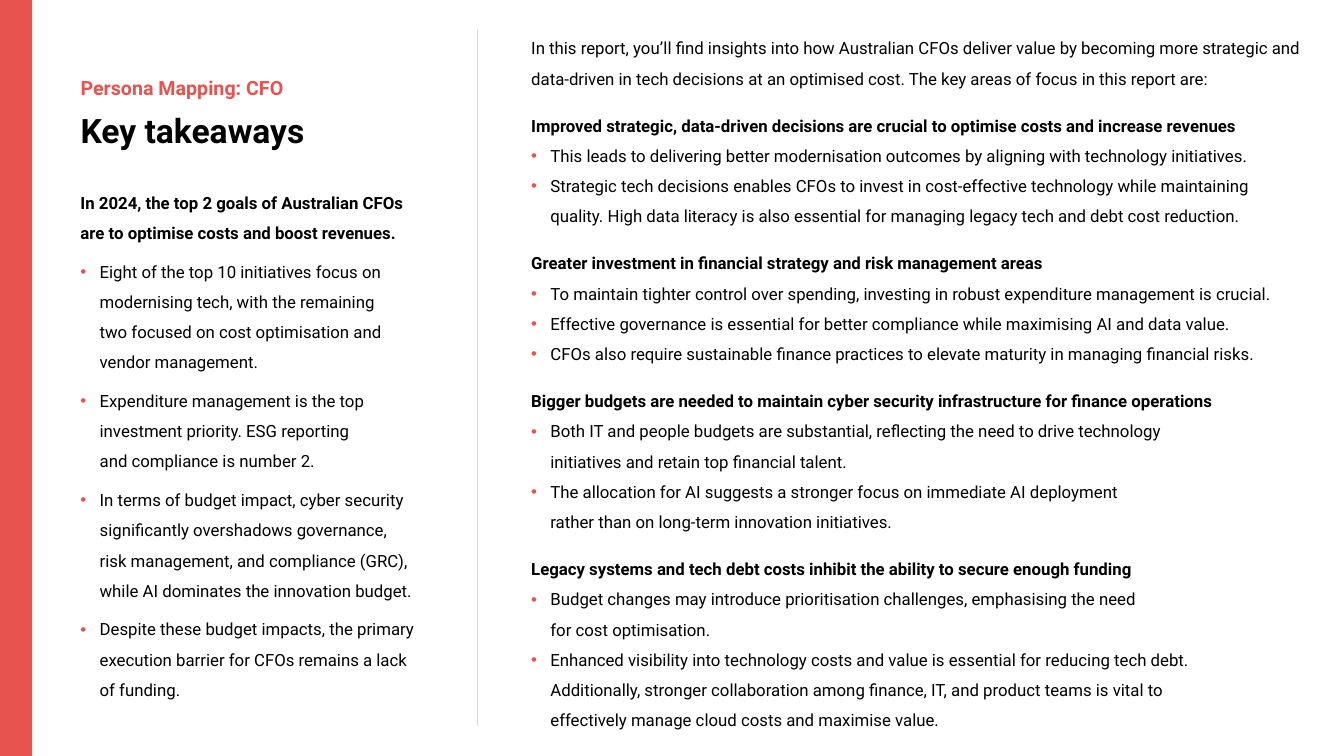
import pptx
import pptx.dml.color
import pptx.enum.shapes
import pptx.enum.text
import pptx.oxml.ns
import pptx.util
from lxml import etree
from pptx.util import Inches

FONT = "Roboto"
CORAL = "E7534F"
BLACK = "000000"
RULE_GREY = "D9D9D9"

GOALS = (
    "In 2024, the top 2 goals of Australian CFOs \nare to optimise costs and boost revenues.",
    [
        "Eight of the top 10 initiatives focus on modernising tech, with the remaining \n"
        "two focused on cost optimisation and \nvendor management.",
        "Expenditure management is the top \ninvestment priority. ESG reporting \n"
        "and compliance is number 2.",
        "In terms of budget impact, cyber security significantly overshadows governance, \n"
        "risk management, and compliance (GRC), \nwhile AI dominates the innovation budget.",
        "Despite these budget impacts, the primary execution barrier for CFOs remains a lack \n"
        "of funding.",
    ],
)

INTRO = (
    "In this report, you’ll find insights into how Australian CFOs deliver value by becoming "
    "more strategic and data-driven in tech decisions at an optimised cost. "
    "The key areas of focus in this report are:"
)

FOCUS_AREAS = [
    (
        "Improved strategic, data-driven decisions are crucial to optimise costs and increase revenues",
        [
            "This leads to delivering better modernisation outcomes by aligning with "
            "technology initiatives.",
            "Strategic tech decisions enables CFOs to invest in cost-effective technology while "
            "maintaining quality. High data literacy is also essential for managing legacy tech "
            "and debt cost reduction.",
        ],
    ),
    (
        "Greater investment in financial strategy and risk management areas",
        [
            "To maintain tighter control over spending, investing in robust expenditure "
            "management is crucial.",
            "Effective governance is essential for better compliance while maximising AI and "
            "data value.",
            "CFOs also require sustainable finance practices to elevate maturity in managing "
            "financial risks.",
        ],
    ),
    (
        "Bigger budgets are needed to maintain cyber security infrastructure for finance operations",
        [
            "Both IT and people budgets are substantial, reflecting the need to drive technology \n"
            "initiatives and retain top financial talent.",
            "The allocation for AI suggests a stronger focus on immediate AI deployment \n"
            "rather than on long-term innovation initiatives.",
        ],
    ),
    (
        "Legacy systems and tech debt costs inhibit the ability to secure enough funding",
        [
            "Budget changes may introduce prioritisation challenges, emphasising the need \n"
            "for cost optimisation.",
            "Enhanced visibility into technology costs and value is essential for reducing tech debt. \n"
            "Additionally, stronger collaboration among finance, IT, and product teams is vital to \n"
            "effectively manage cloud costs and maximise value.",
        ],
    ),
]


def colour(value):
    return pptx.dml.color.RGBColor.from_string(value)


def add_element(parent, tag, **attributes):
    return etree.SubElement(parent, pptx.oxml.ns.qn(tag), **attributes)


def add_bullet(para):
    """Give the paragraph a coral bullet with a hanging indent."""
    properties = para._p.get_or_add_pPr()
    indent = Inches(0.19)
    properties.set("marL", str(indent))
    properties.set("indent", str(-indent))
    add_element(add_element(properties, "a:buClr"), "a:srgbClr", val=CORAL)
    add_element(properties, "a:buFont", typeface="Arial")
    add_element(properties, "a:buChar", char="•")


def add_text(frame, text, size=12, color=BLACK, bold=False, bullet=False, spacing=1.5, after=0):
    """Append one formatted paragraph; newlines become line breaks."""
    first = frame.paragraphs[0]
    para = frame.add_paragraph() if first.runs else first
    para.text = text.replace("\n", "\v")
    para.line_spacing = spacing
    para.space_after = pptx.util.Pt(after)
    if bullet:
        add_bullet(para)
    for span in para.runs:
        span.font.name = FONT
        span.font.size = pptx.util.Pt(size)
        span.font.bold = bold
        span.font.color.rgb = colour(color)
    # Line breaks take the text size so that line heights stay even
    for line_break in para._p.findall(pptx.oxml.ns.qn("a:br")):
        add_element(line_break, "a:rPr", sz=str(size * 100))


def add_text_box(page, left, top, width, height):
    box = page.shapes.add_textbox(Inches(left), Inches(top), Inches(width), Inches(height))
    frame = box.text_frame
    frame.word_wrap = True
    frame.auto_size = pptx.enum.text.MSO_AUTO_SIZE.SHAPE_TO_FIT_TEXT
    return frame


def add_side_band(page):
    band = page.shapes.add_shape(
        pptx.enum.shapes.MSO_SHAPE.RECTANGLE, 0, 0, Inches(0.32), Inches(7.5)
    )
    band.shadow.inherit = False
    band.fill.solid()
    band.fill.fore_color.rgb = colour(CORAL)
    band.line.fill.background()


def add_divider(page, left, top, bottom):
    divider = page.shapes.add_connector(
        pptx.enum.shapes.MSO_CONNECTOR.STRAIGHT,
        Inches(left), Inches(bottom), Inches(left), Inches(top),
    )
    divider.line.color.rgb = colour(RULE_GREY)
    divider.line.width = pptx.util.Pt(0.5)
    add_element(divider._element.spPr, "a:effectLst")


def main():
    deck = pptx.Presentation()
    deck.slide_width = Inches(13.33)
    deck.slide_height = Inches(7.5)
    page = deck.slides.add_slide(deck.slide_layouts[6])

    add_side_band(page)

    # Left column: goals, then the heading pair
    goals = add_text_box(page, 0.7, 1.76, 3.93, 5.25)
    heading, points = GOALS
    add_text(goals, heading, bold=True, after=6)
    for point in points:
        add_text(goals, point, bullet=True, after=6)

    title = add_text_box(page, 0.7, 1.04, 4.52, 0.5)
    add_text(title, "Key takeaways", size=24, bold=True, spacing=1.0)
    kicker = add_text_box(page, 0.7, 0.7, 4.52, 0.34)
    add_text(kicker, "Persona Mapping: CFO", size=14, color=CORAL, bold=True, spacing=1.0)

    add_divider(page, 4.73, 0.3, 7.2)

    # Right column: introduction and focus areas, with a gap after each area
    focus = add_text_box(page, 5.17, 0.23, 7.89, 7.27)
    add_text(focus, INTRO, after=12)
    for heading, points in FOCUS_AREAS:
        add_text(focus, heading, bold=True)
        for point in points:
            add_text(focus, point, bullet=True, after=12 if point == points[-1] else 0)

    deck.save("out.pptx")


if __name__ == "__main__":
    main()
